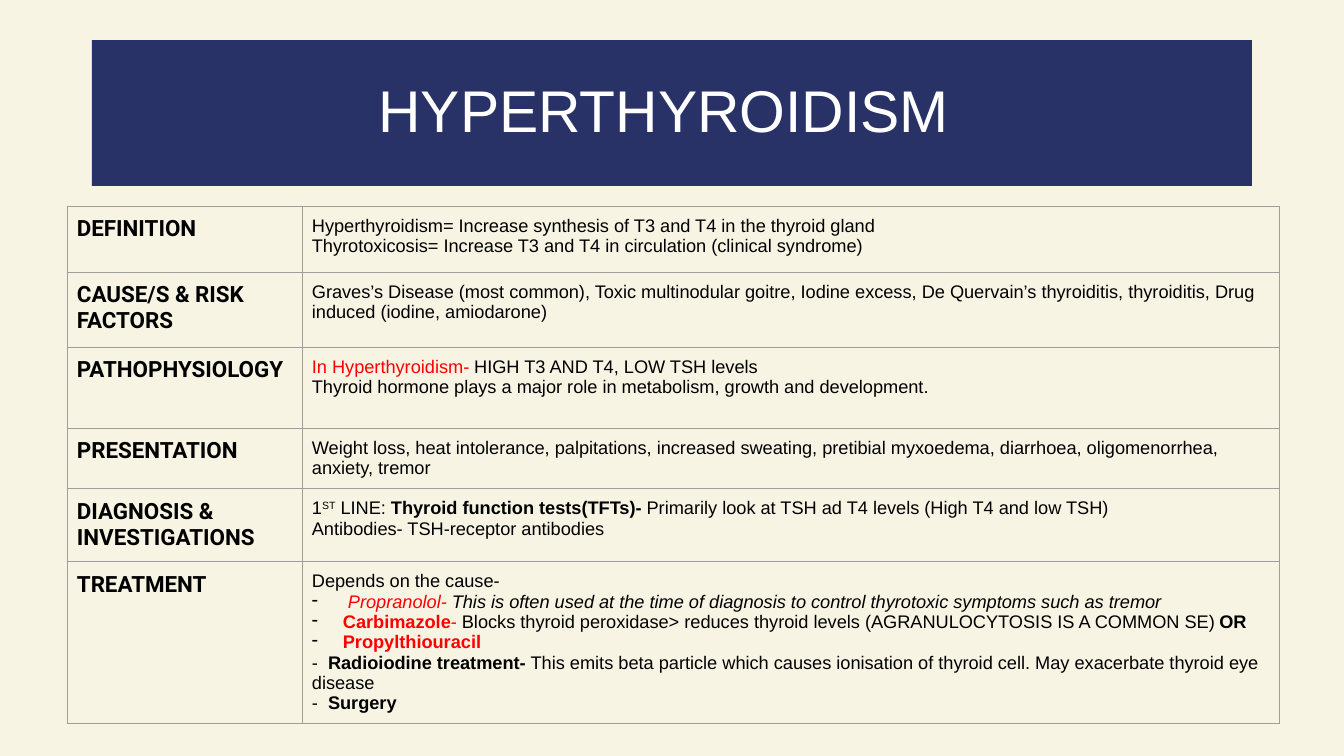
from dataclasses import dataclass

from lxml import etree
from pptx import Presentation
from pptx.dml.color import RGBColor
from pptx.enum.text import MSO_ANCHOR, MSO_AUTO_SIZE, PP_ALIGN
from pptx.oxml.ns import qn
from pptx.util import Emu, Pt

CENTER, LEFT = PP_ALIGN.CENTER, PP_ALIGN.LEFT
MIDDLE, TOP = MSO_ANCHOR.MIDDLE, MSO_ANCHOR.TOP
NO_FIT = MSO_AUTO_SIZE.NONE
TITLE_ONLY = 5
EMU_PER_PX = 914400 / 100.8


@dataclass(frozen=True)
class Theme:
    page: str = "F8F4E4"
    banner: str = "293267"
    banner_text: str = "FFFFFF"
    text: str = "000000"
    drug: str = "FF0000"
    grid: str = "9E9E9E"
    body_font: str = "Arial"
    label_font: str = "Roboto"
    title_size: float = 42
    label_size: float = 16
    body_size: float = 13
    grid_width: float = 0.75


THEME = Theme()


@dataclass(frozen=True)
class Span:
    text: str
    bold: bool = False
    italic: bool = False
    color: str = THEME.text
    raised: bool = False


@dataclass(frozen=True)
class Para:
    spans: tuple[Span, ...]
    bullet: bool = False


@dataclass(frozen=True)
class Topic:
    label: str
    height: int
    paras: tuple[Para, ...]


def line(*spans: Span | str, bullet: bool = False) -> Para:
    return Para(tuple(Span(s) if isinstance(s, str) else s for s in spans), bullet)


TITLE = "HYPERTHYROIDISM "
TITLE_BOX = (92, 40, 1160, 146)
TABLE_LEFT, TABLE_TOP = 67, 206
COLUMNS = (235, 978)
CELL_INSET, BULLET_INDENT = 10, 31

TOPICS = (
    Topic("DEFINITION", 66, (
        line("Hyperthyroidism= Increase synthesis of T3 and T4 in the thyroid gland"),
        line("Thyrotoxicosis= Increase T3 and T4 in circulation (clinical syndrome)"),
    )),
    Topic("CAUSE/S & RISK FACTORS", 75, (
        line("Graves’s Disease (most common), Toxic multinodular goitre, Iodine excess, "
             "De Quervain’s thyroiditis, thyroiditis, Drug induced (iodine, amiodarone)"),
    )),
    Topic("PATHOPHYSIOLOGY", 81, (
        line(Span("In Hyperthyroidism- ", color=THEME.drug), "HIGH T3 AND T4, LOW TSH levels"),
        line("Thyroid hormone plays a major role in metabolism, growth and development."),
    )),
    Topic("PRESENTATION", 60, (
        line("Weight loss, heat intolerance, palpitations, increased sweating, pretibial "
             "myxoedema, diarrhoea, oligomenorrhea, anxiety, tremor"),
    )),
    Topic("DIAGNOSIS & INVESTIGATIONS", 73, (
        line("1", Span("ST", raised=True), " LINE: ",
             Span("Thyroid function tests(TFTs)- ", bold=True),
             "Primarily look at TSH ad T4 levels (High T4 and low TSH)"),
        line("Antibodies- TSH-receptor antibodies"),
    )),
    Topic("TREATMENT", 162, (
        line("Depends on the cause-"),
        line(" ", Span("Propranolol-", italic=True, color=THEME.drug),
             Span(" This is often used at the time of diagnosis to control thyrotoxic "
                  "symptoms such as tremor", italic=True), bullet=True),
        line(Span("Carbimazole", bold=True, color=THEME.drug), Span("-", color=THEME.drug),
             " Blocks thyroid peroxidase> reduces thyroid levels "
             "(AGRANULOCYTOSIS IS A COMMON SE) ", Span("OR", bold=True), bullet=True),
        line(Span("Propylthiouracil", bold=True, color=THEME.drug), bullet=True),
        line("-  ", Span("Radioiodine treatment- ", bold=True),
             "This emits beta particle which causes ionisation of thyroid cell. "
             "May exacerbate thyroid eye disease"),
        line("-  ", Span("Surgery", bold=True)),
    )),
)


def px(value: int) -> Emu:
    return Emu(round(value * EMU_PER_PX))


def apply(target, values: dict) -> None:
    for name, value in values.items():
        setattr(target, name, value)


def add_span(para, span: Span, font: str, size: float) -> None:
    run = para.add_run()
    run.text = span.text
    apply(run.font, {"name": font, "size": Pt(size), "bold": span.bold, "italic": span.italic})
    run.font.color.rgb = RGBColor.from_string(span.color)
    if span.raised:
        run._r.get_or_add_rPr().set("baseline", "30000")


def add_bullet(para) -> None:
    props = para._p.get_or_add_pPr()
    props.set("marL", str(px(BULLET_INDENT)))
    props.set("indent", str(-px(BULLET_INDENT)))
    color = etree.SubElement(props, qn("a:buClr"))
    etree.SubElement(color, qn("a:srgbClr"), val=THEME.text)
    etree.SubElement(props, qn("a:buChar"), char="-")


def write(frame, paras: tuple[Para, ...], font: str, size: float) -> None:
    for index, content in enumerate(paras):
        para = frame.add_paragraph() if index else frame.paragraphs[0]
        para.alignment = LEFT
        if content.bullet:
            add_bullet(para)
        for span in content.spans:
            add_span(para, span, font, size)


def style_cell(cell) -> None:
    inset = px(CELL_INSET)
    apply(cell, {"margin_left": inset, "margin_right": inset, "margin_top": inset,
                 "margin_bottom": inset, "vertical_anchor": TOP})
    cell.fill.background()
    props = cell._tc.get_or_add_tcPr()
    for index, side in enumerate(("lnL", "lnR", "lnT", "lnB")):
        border = etree.Element(qn(f"a:{side}"), w=str(Pt(THEME.grid_width)))
        fill = etree.SubElement(border, qn("a:solidFill"))
        etree.SubElement(fill, qn("a:srgbClr"), val=THEME.grid)
        props.insert(index, border)


def add_title(page) -> None:
    box = page.shapes.title
    left, top, width, height = map(px, TITLE_BOX)
    apply(box, {"left": left, "top": top, "width": width, "height": height})
    box.fill.solid()
    box.fill.fore_color.rgb = RGBColor.from_string(THEME.banner)
    apply(box.text_frame, {"vertical_anchor": MIDDLE, "word_wrap": True, "auto_size": NO_FIT})
    para = box.text_frame.paragraphs[0]
    apply(para, {"alignment": CENTER, "line_spacing": 0.9})
    add_span(para, Span(TITLE, color=THEME.banner_text), THEME.body_font, THEME.title_size)


def add_topics(page) -> None:
    height = sum(topic.height for topic in TOPICS)
    table = page.shapes.add_table(len(TOPICS), len(COLUMNS), px(TABLE_LEFT), px(TABLE_TOP),
                                  px(sum(COLUMNS)), px(height)).table
    apply(table, {"first_row": False, "horz_banding": False})
    for column, width in zip(table.columns, COLUMNS):
        column.width = px(width)
    for row, topic in zip(table.rows, TOPICS):
        row.height = px(topic.height)
        label, body = row.cells
        style_cell(label)
        style_cell(body)
        write(label.text_frame, (line(Span(topic.label, bold=True)),),
              THEME.label_font, THEME.label_size)
        write(body.text_frame, topic.paras, THEME.body_font, THEME.body_size)


def main() -> None:
    deck = Presentation()
    apply(deck, {"slide_width": px(1344), "slide_height": px(756)})
    page = deck.slides.add_slide(deck.slide_layouts[TITLE_ONLY])
    page.background.fill.solid()
    page.background.fill.fore_color.rgb = RGBColor.from_string(THEME.page)
    add_title(page)
    add_topics(page)
    deck.save("out.pptx")


if __name__ == "__main__":
    main()
